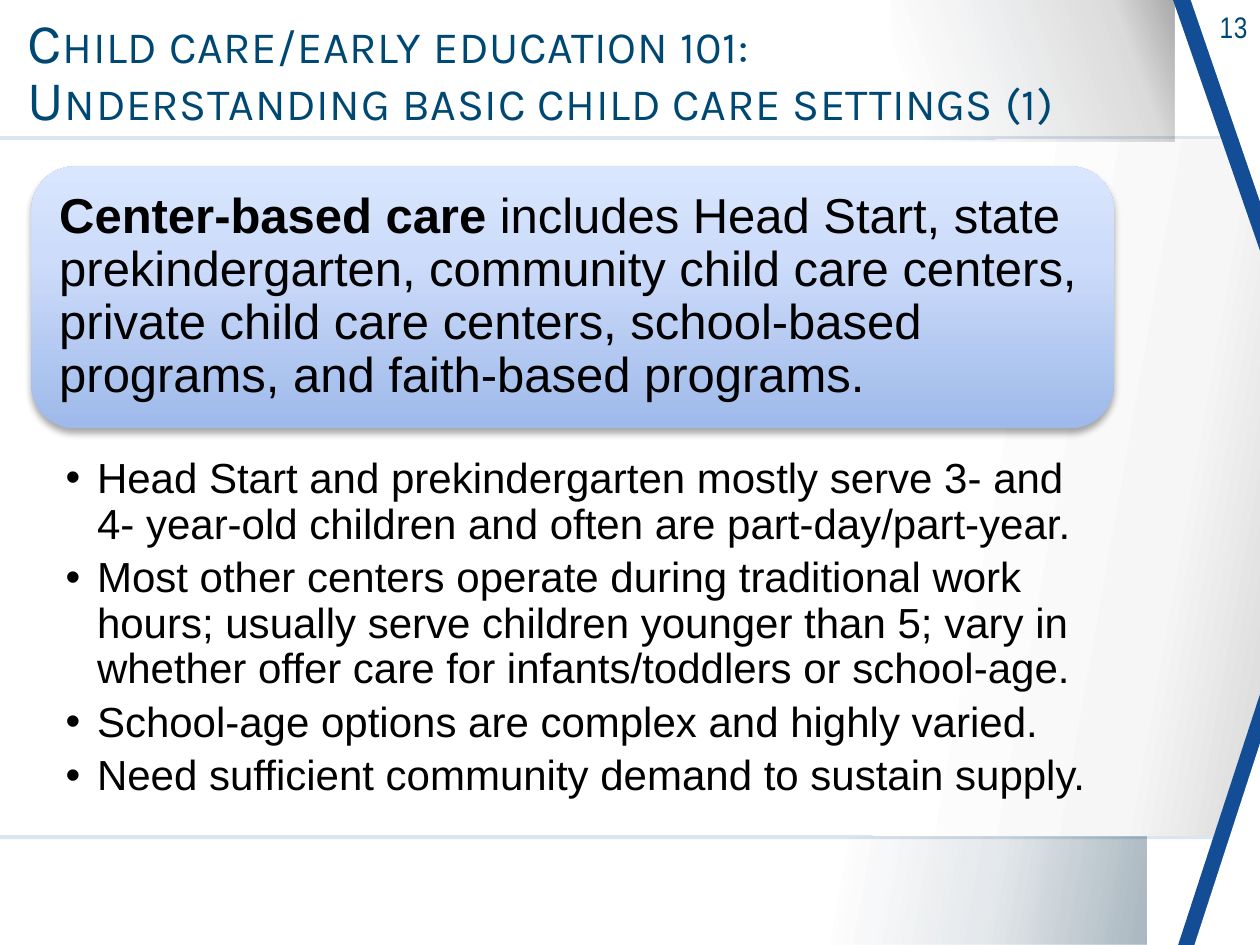
from dataclasses import dataclass

from lxml import etree
from pptx import Presentation
from pptx.dml.color import RGBColor
from pptx.enum.shapes import MSO_SHAPE
from pptx.enum.text import MSO_ANCHOR, PP_ALIGN
from pptx.oxml.ns import qn
from pptx.util import Inches, Pt

RECT = MSO_SHAPE.RECTANGLE
ROUND = MSO_SHAPE.ROUNDED_RECTANGLE
TRIANGLE = MSO_SHAPE.ISOSCELES_TRIANGLE
TOP, MIDDLE = MSO_ANCHOR.TOP, MSO_ANCHOR.MIDDLE
LEFT, RIGHT = PP_ALIGN.LEFT, PP_ALIGN.RIGHT

COLS, ROWS = 100, 75
NAVY, BLUE, WHITE, BLACK = "004874", "124D95", "FFFFFF", "000000"
DEEP = "002C47"


@dataclass(frozen=True)
class Box:
    col: float
    row: float
    cols: float
    rows: float


@dataclass(frozen=True)
class Stop:
    pos: int
    color: str
    alpha: int = 100


@dataclass(frozen=True)
class Panel:
    box: Box
    stops: tuple[Stop, ...]
    angle: int = 0
    kind: MSO_SHAPE = RECT
    adj: float | None = None
    flip: bool = False


@dataclass(frozen=True)
class TextBlock:
    box: Box
    paragraphs: tuple[tuple[tuple[str, bool], ...], ...]
    font: dict
    para: dict
    frame: dict
    spacing: float = 0
    small_caps: bool = False
    bullet: bool = False


def rgb(color: str) -> RGBColor:
    return RGBColor.from_string(color)


def apply(target, values: dict) -> None:
    for name, value in values.items():
        setattr(target, name, value)


def place(prs, box: Box) -> tuple[int, int, int, int]:
    w, h = prs.slide_width / COLS, prs.slide_height / ROWS
    return (round(box.col * w), round(box.row * h),
            round(box.cols * w), round(box.rows * h))


def add_color(parent, color: str, alpha: int) -> None:
    clr = etree.SubElement(parent, qn("a:srgbClr"), val=str(rgb(color)))
    if alpha < 100:
        etree.SubElement(clr, qn("a:alpha"), val=str(alpha * 1000))


def paint(sp, stops: tuple[Stop, ...], angle: int) -> None:
    if len(stops) == 1:
        sp.fill.solid()
        sp.fill.fore_color.rgb = rgb(stops[0].color)
        solid = sp._element.spPr.find(qn("a:solidFill"))
        solid.clear()
        add_color(solid, stops[0].color, stops[0].alpha)
        return
    sp.fill.gradient()
    grad = sp._element.spPr.find(qn("a:gradFill"))
    grad.clear()
    grad.set("rotWithShape", "1")
    gs_list = etree.SubElement(grad, qn("a:gsLst"))
    for stop in stops:
        gs = etree.SubElement(gs_list, qn("a:gs"), pos=str(stop.pos * 1000))
        add_color(gs, stop.color, stop.alpha)
    etree.SubElement(grad, qn("a:lin"), ang=str(angle * 60000), scaled="0")


def add_panel(prs, s, panel: Panel):
    sp = s.shapes.add_shape(panel.kind, *place(prs, panel.box))
    sp.shadow.inherit = False
    sp.line.fill.background()
    if panel.adj is not None:
        sp.adjustments[0] = panel.adj
    if panel.flip:
        sp._element.spPr.find(qn("a:xfrm")).set("flipV", "1")
    paint(sp, panel.stops, panel.angle)
    return sp


def add_shadow(sp, alpha: int, blur: int, dist: int, angle: int) -> None:
    effects = sp._element.spPr.find(qn("a:effectLst"))
    shadow = etree.SubElement(
        effects, qn("a:outerShdw"), blurRad=str(Pt(blur)), dist=str(Pt(dist)),
        dir=str(angle * 60000), rotWithShape="0")
    add_color(shadow, BLACK, alpha)


def add_run(p, block: TextBlock, text: str, bold: bool) -> None:
    r = p.add_run()
    r.text = text
    apply(r.font, block.font | {"bold": bold})
    r.font.color.rgb = rgb(NAVY if block.spacing else BLACK)
    r_pr = r._r.get_or_add_rPr()
    if block.spacing:
        r_pr.set("spc", str(round(block.spacing * 100)))
    if block.small_caps:
        r_pr.set("cap", "small")


def add_text(prs, s, block: TextBlock) -> None:
    tf = s.shapes.add_textbox(*place(prs, block.box)).text_frame
    apply(tf, {"word_wrap": True} | block.frame)
    for i, runs in enumerate(block.paragraphs):
        p = tf.add_paragraph() if i else tf.paragraphs[0]
        if block.bullet:
            p_pr = p._p.get_or_add_pPr()
            p_pr.set("marL", str(Inches(0.25)))
            p_pr.set("indent", str(Inches(-0.25)))
            etree.SubElement(p_pr, qn("a:buFont"), typeface="Arial")
            etree.SubElement(p_pr, qn("a:buChar"), char="•")
        apply(p, block.para)
        for text, bold in runs:
            for n, line in enumerate(text.split("\n")):
                if n:
                    p.add_line_break()
                add_run(p, block, line, bold)


def margins(left: float, top: float, right: float, bottom: float) -> dict:
    sides = {"left": left, "top": top, "right": right, "bottom": bottom}
    return {f"margin_{side}": Inches(v) for side, v in sides.items()}


def ribbon(box: Box, color: str, flip: bool) -> Panel:
    return Panel(box, (Stop(0, color),), kind=TRIANGLE, adj=1, flip=flip)


BACKDROP = (
    Panel(Box(0, 10.8, 100, 55.8), (Stop(0, "275A99", 16),)),
    Panel(Box(0, 11.1, 100, 55.2), (Stop(0, WHITE), Stop(72, WHITE),
          Stop(90, "F6F6F6"), Stop(100, "D9D9D9")), 10),
    Panel(Box(64.3, 66.4, 26.7, 8.6), (Stop(10, DEEP, 0), Stop(56, DEEP, 11),
          Stop(100, DEEP, 34)), 10),
    Panel(Box(70.8, 0, 22.4, 11.2), (Stop(10, DEEP, 0), Stop(81, BLACK, 14),
          Stop(100, BLACK, 34)), 340),
    ribbon(Box(93.1, 0, 6.9, 19.9), BLUE, True),
    ribbon(Box(94.5, 0, 5.5, 16), WHITE, True),
    ribbon(Box(93.5, 55.1, 6.5, 19.9), BLUE, False),
    ribbon(Box(94.8, 59, 5.2, 16), WHITE, False),
)
CALLOUT = Panel(Box(2.5, 13.2, 85.9, 20.8), (Stop(0, "9EB9EA"),
                Stop(65, "CDDCFA"), Stop(100, "D9E6FE")), 270, ROUND, 0.1667)

TEXTS = (
    TextBlock(Box(92, 0.2, 8, 3.9), ((("13", False),),),
              {"name": "Arial Narrow", "size": Pt(17)}, {"alignment": RIGHT},
              {"vertical_anchor": TOP}, spacing=0.4),
    TextBlock(Box(1.2, 1.7, 89.7, 8.5),
              ((("Child care/early education 101:\n"
                 "Understanding basic child care settings (1)", False),),),
              {"name": "Karla", "size": Pt(32)},
              {"alignment": LEFT, "line_spacing": 0.85},
              {"vertical_anchor": MIDDLE}, spacing=0.4, small_caps=True),
    TextBlock(Box(3.5, 14.2, 83.9, 18.8),
              ((("Center-based care", True),
                (" includes Head Start, state prekindergarten, community child "
                 "care centers, private child care centers, school-based "
                 "programs, and faith-based programs.", False)),),
              {"name": "Arial", "size": Pt(28)},
              {"line_spacing": 0.9, "space_after": Pt(9.8)},
              {"vertical_anchor": MIDDLE} | margins(0.12, 0.12, 0.12, 0.12)),
    TextBlock(Box(2.5, 36, 85.9, 27.2), tuple(((line, False),) for line in (
        "Head Start and prekindergarten mostly serve 3- and 4- year-old "
        "children and often are part-day/part-year.",
        "Most other centers operate during traditional work hours; usually "
        "serve children younger than 5; vary in whether offer care for "
        "infants/toddlers or school-age.",
        "School-age options are complex and highly varied.",
        "Need sufficient community demand to sustain supply.")),
              {"name": "Arial", "size": Pt(24)},
              {"line_spacing": 0.9, "space_after": Pt(4.8)},
              {"vertical_anchor": TOP} | margins(0.27, 0.03, 0.19, 0.03),
              bullet=True),
)


def main() -> None:
    prs = Presentation()
    prs.slide_width, prs.slide_height = Inches(10), Inches(7.5)
    s = prs.slides.add_slide(prs.slide_layouts[6])
    for panel in BACKDROP:
        add_panel(prs, s, panel)
    add_shadow(add_panel(prs, s, CALLOUT), 35, 4, 3, 90)
    for block in TEXTS:
        add_text(prs, s, block)
    prs.save("out.pptx")


if __name__ == "__main__":
    main()
